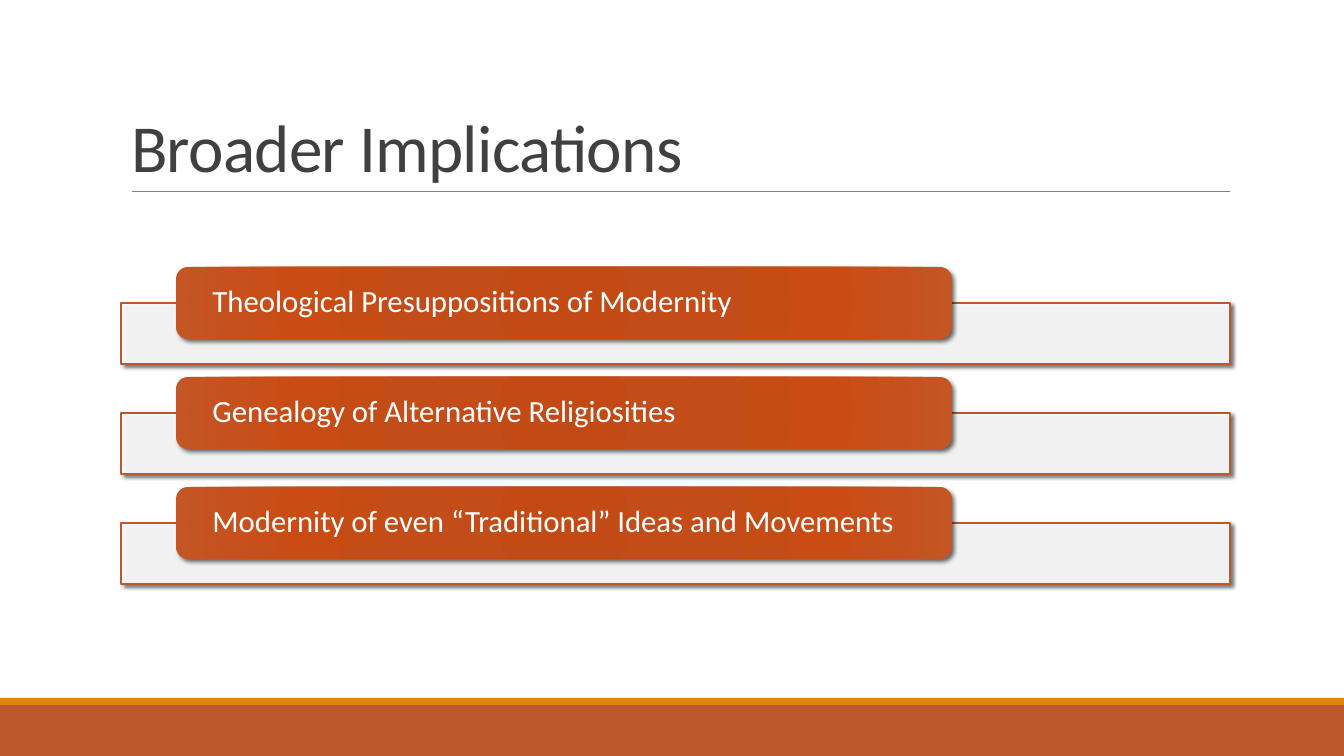
import pptx
import pptx.util
import pptx.dml.color
import pptx.enum.shapes
import pptx.enum.text
import pptx.oxml
import pptx.oxml.ns
from lxml import etree

RGBColor = pptx.dml.color.RGBColor
Pt = pptx.util.Pt
Shapes = pptx.enum.shapes.MSO_SHAPE
Anchor = pptx.enum.text.MSO_ANCHOR
qn = pptx.oxml.ns.qn

EMU_PER_INCH = 914400
PX_PER_INCH = 100.8
FONT = "Calibri"
WHITE = RGBColor(0xFF, 0xFF, 0xFF)
BLACK = RGBColor(0x00, 0x00, 0x00)
RUST = RGBColor(0xBD, 0x58, 0x2C)
ORANGE = RGBColor(0xE4, 0x83, 0x12)
GRAY = RGBColor(0x80, 0x80, 0x80)
CHARCOAL = RGBColor(0x40, 0x40, 0x40)
TAB_STOPS = [
    (0, RGBColor(0xC4, 0x4A, 0x15)),
    (34, RGBColor(0xC3, 0x4C, 0x18)),
    (70, RGBColor(0xC9, 0x4C, 0x15)),
    (100, RGBColor(0xC4, 0x55, 0x25)),
]
IMPLICATIONS = [
    "Theological Presuppositions of Modernity",
    "Genealogy of Alternative Religiosities",
    "Modernity of even “Traditional” Ideas and Movements",
]


def px(length):
    return round(length * EMU_PER_INCH / PX_PER_INCH)


def add_block(page, kind, box):
    block = page.shapes.add_shape(kind, *map(px, box))
    block.shadow.inherit = False
    block.line.fill.background()
    return block


def fill_solid(block, color):
    block.fill.solid()
    block.fill.fore_color.rgb = color


def add_shadow(block, blur):
    effects = block.element.spPr.find(qn("a:effectLst"))
    shadow = etree.SubElement(
        effects, qn("a:outerShdw"), blurRad=str(Pt(blur)), dist=str(Pt(2)),
        dir="2700000", algn="br", rotWithShape="0")
    color = etree.SubElement(shadow, qn("a:srgbClr"), val=str(BLACK))
    etree.SubElement(color, qn("a:alpha"), val="60000")


def fill_radial(block, stops):
    block.fill.gradient()
    gradient = block.element.spPr.find(qn("a:gradFill"))
    for child in list(gradient):
        gradient.remove(child)
    stop_list = etree.SubElement(gradient, qn("a:gsLst"))
    for percent, color in stops:
        stop = etree.SubElement(stop_list, qn("a:gs"), pos=str(percent * 1000))
        etree.SubElement(stop, qn("a:srgbClr"), val=str(color))
    shade = etree.SubElement(gradient, qn("a:path"), path="circle")
    etree.SubElement(shade, qn("a:fillToRect"),
                     l="100000", t="100000", r="100000", b="100000")


def write(frame, words, size, color, spacing):
    para = frame.paragraphs[0]
    para.alignment = pptx.enum.text.PP_ALIGN.LEFT
    para.line_spacing = spacing
    span = para.add_run()
    span.text = words
    span.font.name = FONT
    span.font.size = Pt(size)
    span.font.color.rgb = color
    return span


def add_footer(page, box):
    left, top, width, height = box
    stripe = 7
    fill_solid(add_block(page, Shapes.RECTANGLE,
                         (left, top + stripe, width, height - stripe)), RUST)
    fill_solid(add_block(page, Shapes.RECTANGLE,
                         (left, top, width, stripe)), ORANGE)


def add_title(page, box):
    left, top, width, height = box
    title = page.shapes.title
    title.left, title.top, title.width, title.height = map(px, box)
    frame = title.text_frame
    frame.word_wrap = True
    frame.auto_size = pptx.enum.text.MSO_AUTO_SIZE.NONE
    frame.vertical_anchor = Anchor.BOTTOM
    span = write(frame, "Broader Implications", 48, CHARCOAL, 0.85)
    span.font._element.set("spc", "-50")

    bottom = top + height
    rule = page.shapes.add_connector(
        pptx.enum.shapes.MSO_CONNECTOR.STRAIGHT,
        px(left + 11), px(bottom), px(left + width), px(bottom))
    rule.line.color.rgb = GRAY
    rule.line.width = Pt(0.5)
    etree.SubElement(rule.element.spPr, qn("a:effectLst"))


def add_implication(page, box, words):
    left, top, width, height = box
    bar = add_block(page, Shapes.RECTANGLE,
                    (left, top + 36, width, height - 36))
    fill_solid(bar, WHITE)
    color = bar.element.spPr.find(qn("a:solidFill"))[0]
    etree.SubElement(color, qn("a:alpha"), val="90000")
    bar.line.color.rgb = RUST
    bar.line.width = Pt(1)
    add_shadow(bar, 3)

    tab = add_block(page, Shapes.ROUNDED_RECTANGLE, (left + 55, top, 776, 72))
    fill_radial(tab, TAB_STOPS)
    add_shadow(tab, 3.5)
    frame = tab.text_frame
    frame.word_wrap = True
    frame.vertical_anchor = Anchor.MIDDLE
    frame.margin_left = frame.margin_right = px(33)
    frame.margin_top = frame.margin_bottom = 0
    write(frame, words, 22, WHITE, 0.9)


def add_implications(page, box):
    left, top, width, height = box
    gap = 13
    step = (height + gap) / len(IMPLICATIONS)
    for index, words in enumerate(IMPLICATIONS):
        add_implication(page, (left, top + index * step, width, step - gap),
                        words)


def main():
    deck = pptx.Presentation()
    deck.slide_width, deck.slide_height = px(1344), px(756)
    page = deck.slides.add_slide(deck.slide_layouts[5])
    add_footer(page, (0, 698, 1344, 58))
    add_title(page, (121, 31, 1109, 160))
    add_implications(page, (121, 267, 1109, 317))
    deck.save("out.pptx")


if __name__ == "__main__":
    main()
